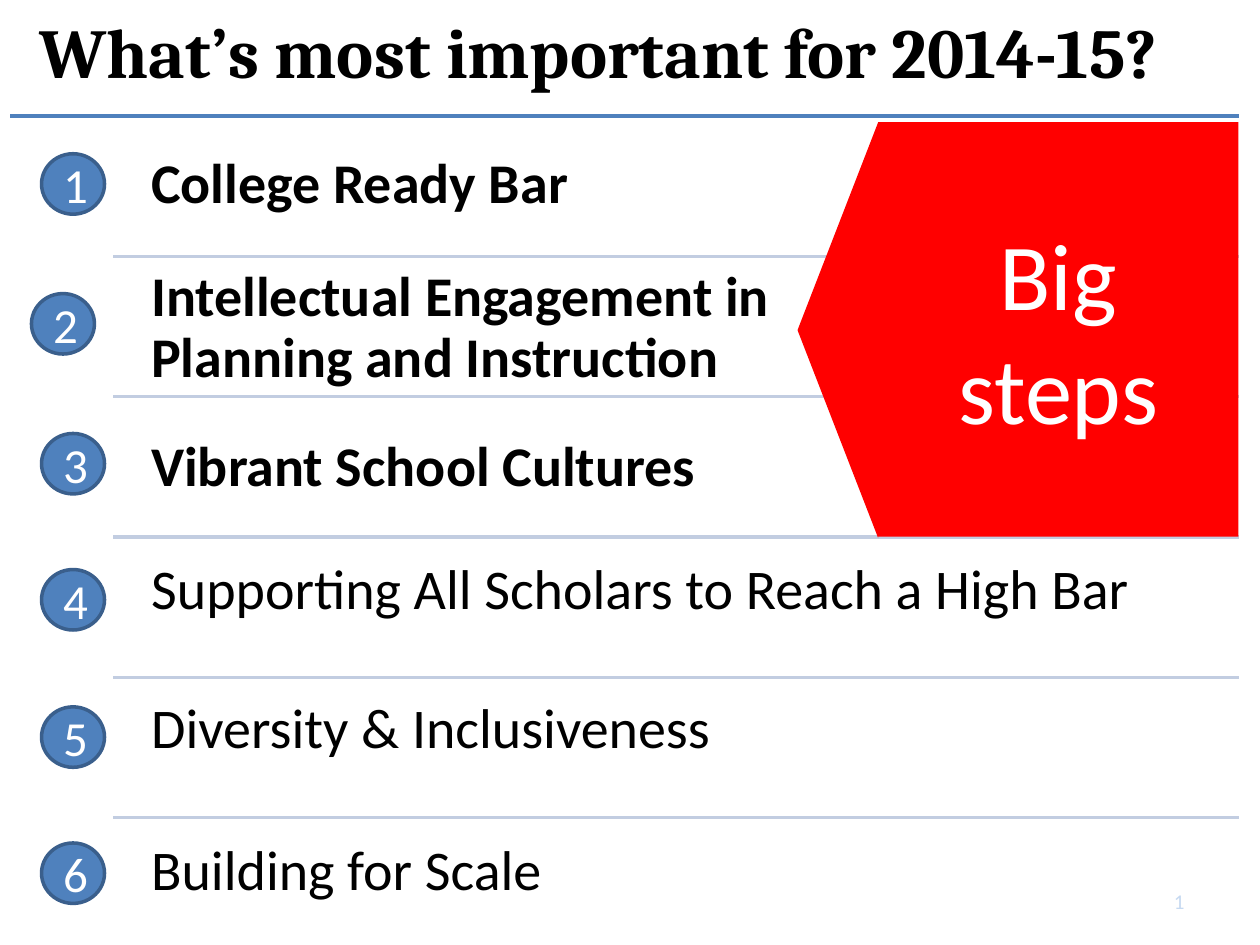
"""Build the slide of six priorities for 2014-15."""
from lxml import etree
from pptx import Presentation
from pptx.dml.color import RGBColor
from pptx.enum.shapes import MSO_CONNECTOR, MSO_SHAPE
from pptx.enum.text import MSO_ANCHOR, PP_ALIGN
from pptx.oxml.ns import qn
from pptx.util import Inches, Pt

BLACK = RGBColor(0x00, 0x00, 0x00)
WHITE = RGBColor(0xFF, 0xFF, 0xFF)
RED = RGBColor(0xFF, 0x00, 0x00)
BLUE = RGBColor(0x4F, 0x81, 0xBD)
DARK_BLUE = RGBColor(0x3A, 0x5F, 0x8C)
RULE = RGBColor(0xC2, 0xCD, 0xE1)
PALE = RGBColor(0xC6, 0xD9, 0xF1)

PRIORITIES = [
    ("College Ready Bar", True, 1.1, 0.33, 1.22),
    ("Intellectual Engagement in\vPlanning and Instruction", True, 2, 0.25, 2.33),
    ("Vibrant School Cultures", True, 3.35, 0.33, 3.44),
    ("Supporting All Scholars to Reach a High Bar", False, 4.32, 0.33, 4.52),
    ("Diversity & Inclusiveness", False, 5.43, 0.33, 5.61),
    ("Building for Scale", False, 6.55, 0.33, 6.69),
]


def write(s, text, size, color, align, anchor, font="Calibri", bold=False, inset=0.1):
    tf = s.text_frame
    tf.word_wrap = True
    tf.vertical_anchor = anchor
    tf.margin_left = tf.margin_right = Inches(inset)
    p = tf.paragraphs[0]
    p.text = text
    p.alignment = align
    p.font.name = font
    p.font.size = Pt(size)
    p.font.bold = bold
    p.font.color.rgb = color
    return tf


def add_shape(kind, left, top, width, height, fill):
    s = slide.shapes.add_shape(
        kind, Inches(left), Inches(top), Inches(width), Inches(height))
    s.shadow.inherit = False
    s.fill.solid()
    s.fill.fore_color.rgb = fill
    s.line.fill.background()
    return s


prs = Presentation()
prs.slide_width = Inches(10)
prs.slide_height = Inches(7.5)
slide = prs.slides.add_slide(prs.slide_layouts[6])

for i, (text, bold, top, left, badge_top) in enumerate(PRIORITIES):
    y = Inches(0.92 + 1.114 * i)
    line = slide.shapes.add_connector(
        MSO_CONNECTOR.STRAIGHT, Inches(0.9 if i else 0.08), y, Inches(9.83), y)
    line.line.color.rgb = RULE if i else BLUE
    line.line.width = Pt(2)
    etree.SubElement(line._element.spPr, qn("a:effectLst"))

    box = slide.shapes.add_textbox(
        Inches(1.07), Inches(top), Inches(8.77), Inches(1.06))
    tf = write(box, text, 32, BLACK, PP_ALIGN.LEFT, MSO_ANCHOR.TOP,
               bold=bold, inset=0.13)
    tf.margin_top = tf.margin_bottom = Inches(0.13)
    tf.paragraphs[0].line_spacing = 0.9

    badge = add_shape(MSO_SHAPE.OVAL, left, badge_top, 0.5, 0.48, BLUE)
    badge.line.color.rgb = DARK_BLUE
    badge.line.width = Pt(2)
    write(badge, str(i + 1), 28, WHITE, PP_ALIGN.CENTER, MSO_ANCHOR.MIDDLE)

title = slide.shapes.add_textbox(Inches(0), Inches(0.11), Inches(9.5), Inches(0.58))
write(title, "What’s most important for 2014-15?", 40, BLACK, PP_ALIGN.CENTER,
      MSO_ANCHOR.MIDDLE, font="Cambria", bold=True)

arrow = add_shape(MSO_SHAPE.ISOSCELES_TRIANGLE, 5, 2.3, 3.3, 0.64, RED)
arrow.rotation = 270
panel = add_shape(MSO_SHAPE.RECTANGLE, 6.97, 0.97, 2.86, 3.29, RED)
write(panel, "Big steps", 54, WHITE, PP_ALIGN.CENTER, MSO_ANCHOR.MIDDLE, inset=0.3)

number = slide.shapes.add_textbox(Inches(7.17), Inches(6.95), Inches(2.33), Inches(0.4))
write(number, "1", 12, PALE, PP_ALIGN.RIGHT, MSO_ANCHOR.MIDDLE)

prs.save("out.pptx")
